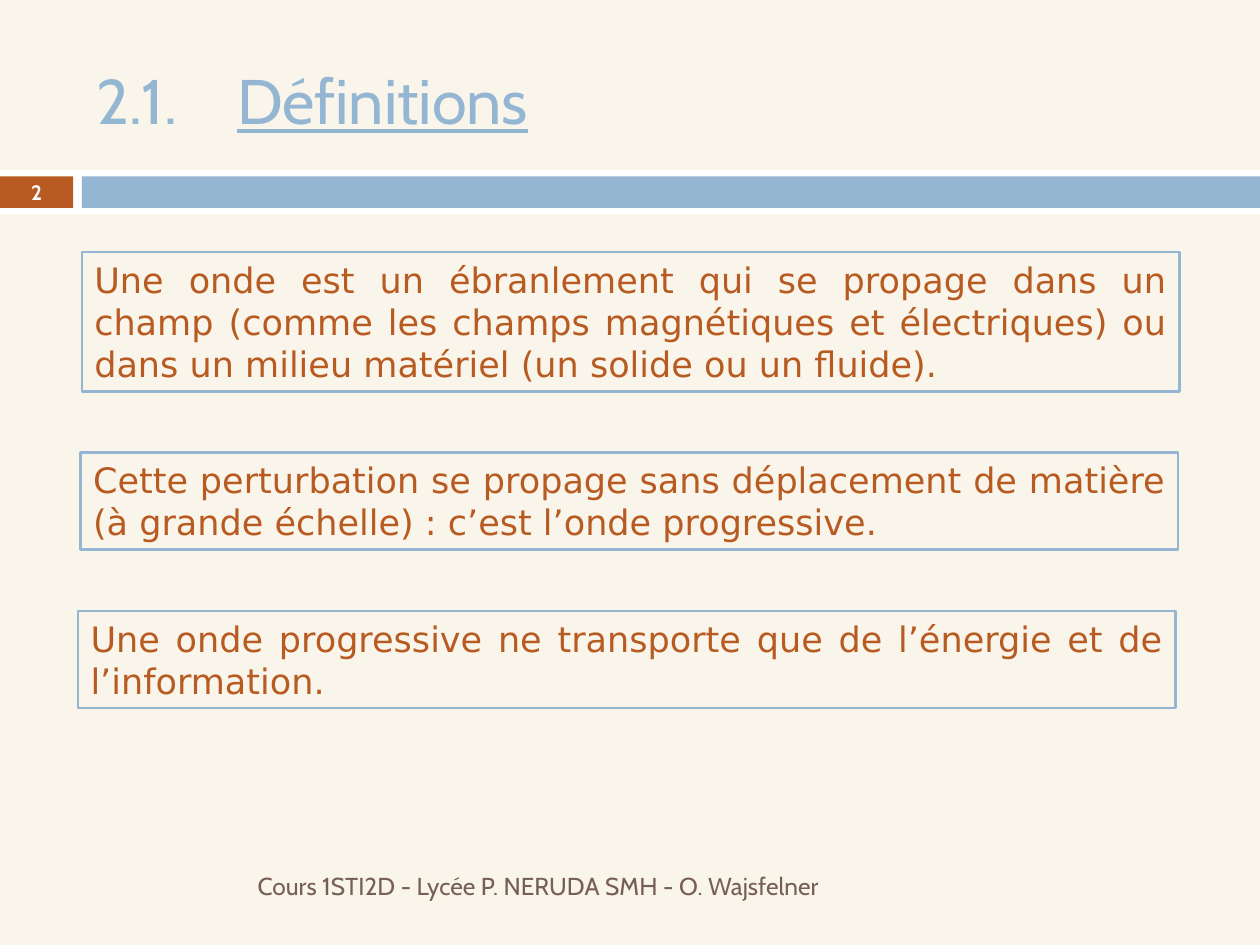
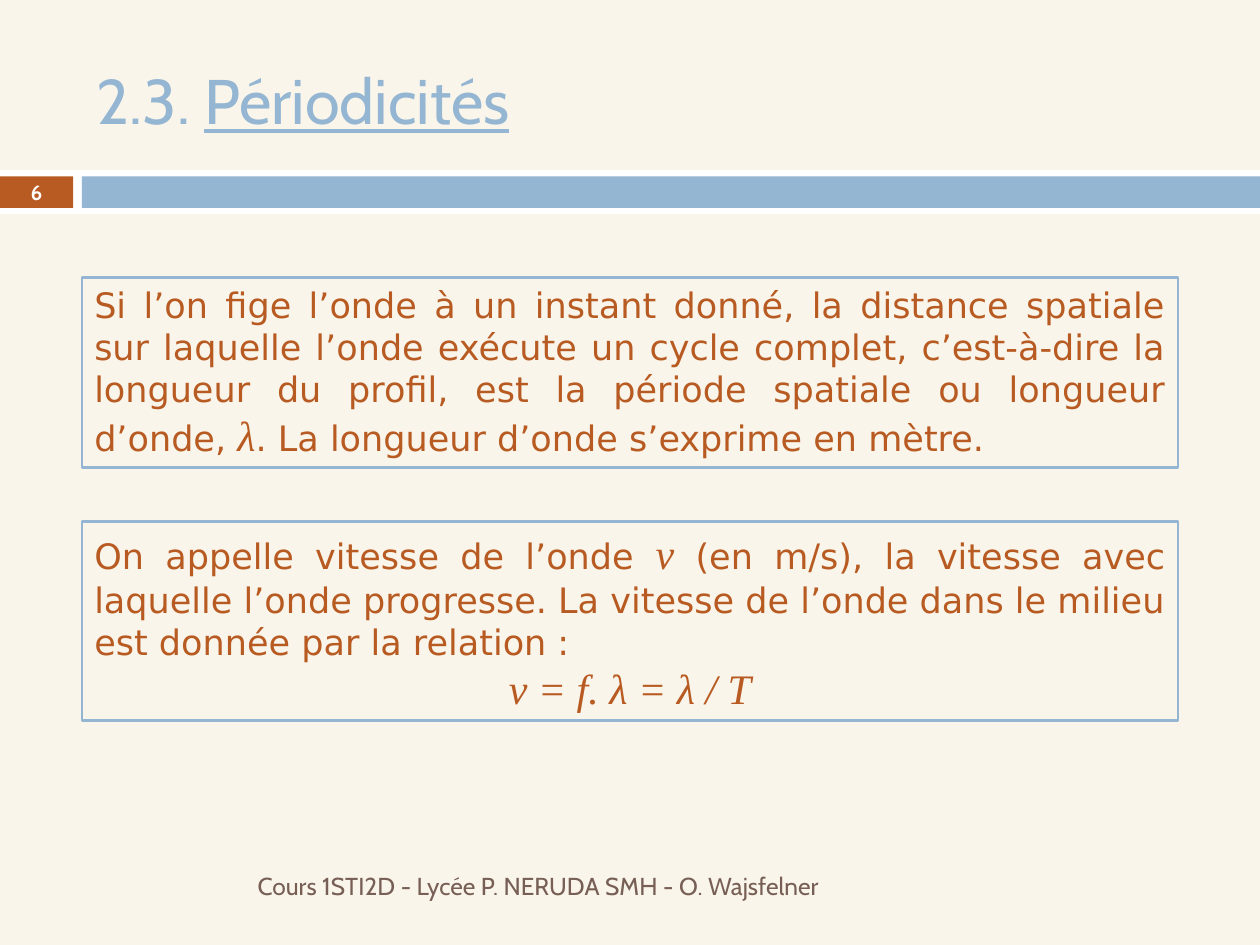
import pptx
import pptx.dml.color
import pptx.enum.shapes
import pptx.enum.text
import pptx.util

Inches = pptx.util.Inches
RGBColor = pptx.dml.color.RGBColor
ALIGN = pptx.enum.text.PP_ALIGN
ANCHOR = pptx.enum.text.MSO_ANCHOR

CREAM = RGBColor(0xFA, 0xF5, 0xEA)
WHITE = RGBColor(0xFF, 0xFF, 0xFF)
RUST = RGBColor(0xB8, 0x5B, 0x22)
BLUE = RGBColor(0x94, 0xB6, 0xD2)
BROWN = RGBColor(0x77, 0x5F, 0x55)

TITLE = {"font": "Cabin", "size": 36, "color": BLUE}
TITLE_UNDERLINED = {**TITLE, "underline": True}
NUMBER = {"font": "Cabin", "size": 11.9, "color": WHITE, "bold": True}
FOOTER = {"font": "Cabin", "size": 14, "color": BROWN}
BODY = {"font": "DejaVu Sans", "size": 20, "color": RUST}
SYMBOL = {"font": "Times New Roman", "size": 24, "color": RUST, "italic": True}

FOOTER_TEXT = "Cours 1STI2D - Lycée P. NERUDA SMH - O. Wajsfelner"

BANDS = [
    ((0, 1.35, 10, 0.35), WHITE),
    ((0, 1.4, 0.58, 0.25), RUST),
    ((0.65, 1.4, 9.35, 0.25), BLUE),
]

SLIDES = [
    {
        "number": "2",
        "heading": ("2.1.\t ", "Définitions"),
        "box_fill": None,
        "boxes": [
            ((0.65, 2, 8.71, 1.11), [
                (ALIGN.JUSTIFY, [
                    ("Une onde est un ébranlement qui se propage dans un champ "
                     "(comme les champs magnétiques et électriques) ou dans un "
                     "milieu matériel (un solide ou un fluide).", BODY),
                ]),
            ]),
            ((0.64, 3.59, 8.71, 0.77), [
                (ALIGN.JUSTIFY, [
                    ("Cette perturbation se propage sans déplacement de matière "
                     "(à grande échelle) : c’est l’onde progressive.", BODY),
                ]),
            ]),
            ((0.62, 4.85, 8.71, 0.77), [
                (ALIGN.JUSTIFY, [
                    ("Une onde progressive ne transporte que de l’énergie et de "
                     "l’information.", BODY),
                ]),
            ]),
        ],
    },
    {
        "number": "6",
        "heading": ("2.3. ", "Périodicités"),
        "box_fill": CREAM,
        "boxes": [
            ((0.65, 2.2, 8.7, 1.51), [
                (ALIGN.JUSTIFY, [
                    ("Si l’on fige l’onde à un instant donné, la distance spatiale "
                     "sur laquelle l’onde exécute un cycle complet, c’est-à-dire la "
                     "longueur du profil, est la période spatiale ou longueur "
                     "d’onde, ", BODY),
                    ("λ", SYMBOL),
                    (". La longueur d’onde s’exprime en mètre.", BODY),
                ]),
            ]),
            ((0.65, 4.14, 8.7, 1.58), [
                (ALIGN.JUSTIFY, [
                    ("On appelle vitesse de l’onde ", BODY),
                    ("v", SYMBOL),
                    (" (en m/s), la vitesse avec laquelle l’onde progresse. La "
                     "vitesse de l’onde dans le milieu est donnée par la "
                     "relation :", BODY),
                ]),
                (ALIGN.CENTER, [("v = f. λ = λ / T", SYMBOL)]),
            ]),
        ],
    },
]


def write_text(shape, paragraphs, anchor):
    frame = shape.text_frame
    frame.word_wrap = True
    frame.vertical_anchor = anchor
    for index, (alignment, runs) in enumerate(paragraphs):
        paragraph = frame.add_paragraph() if index else frame.paragraphs[0]
        paragraph.alignment = alignment
        for text, style in runs:
            run = paragraph.add_run()
            run.text = text
            run.font.name = style["font"]
            run.font.size = pptx.util.Pt(style["size"])
            run.font.color.rgb = style["color"]
            run.font.bold = style.get("bold", False)
            run.font.italic = style.get("italic", False)
            run.font.underline = style.get("underline", False)


def add_rectangle(slide, place, fill=None, line=None):
    shape = slide.shapes.add_shape(
        pptx.enum.shapes.MSO_SHAPE.RECTANGLE, *map(Inches, place))
    shape.shadow.inherit = False
    if fill is None:
        shape.fill.background()
    else:
        shape.fill.solid()
        shape.fill.fore_color.rgb = fill
    if line is None:
        shape.line.fill.background()
    else:
        shape.line.color.rgb = line
        shape.line.width = pptx.util.Pt(1.5)
    return shape


def add_label(slide, place, alignment, runs):
    label = slide.shapes.add_textbox(*map(Inches, place))
    write_text(label, [(alignment, runs)], ANCHOR.MIDDLE)


def add_definition_box(slide, place, paragraphs, fill):
    box = add_rectangle(slide, place, fill, BLUE)
    write_text(box, paragraphs, ANCHOR.TOP)
    box.text_frame.auto_size = pptx.enum.text.MSO_AUTO_SIZE.SHAPE_TO_FIT_TEXT


def build_slide(presentation, content):
    slide = presentation.slides.add_slide(presentation.slide_layouts[6])
    for place, color in BANDS:
        add_rectangle(slide, place, color)
    section, topic = content["heading"]
    add_label(slide, (0.67, 0.25, 8.92, 1.08), ALIGN.LEFT,
              [(section, TITLE), (topic, TITLE_UNDERLINED)])
    add_label(slide, (0, 1.39, 0.58, 0.27), ALIGN.CENTER,
              [(content["number"], NUMBER)])
    add_label(slide, (0.67, 6.83, 5.93, 0.4), ALIGN.RIGHT,
              [(FOOTER_TEXT, FOOTER)])
    for place, paragraphs in content["boxes"]:
        add_definition_box(slide, place, paragraphs, content["box_fill"])


def main():
    presentation = pptx.Presentation()
    presentation.slide_width = Inches(10)
    presentation.slide_height = Inches(7.5)
    background = presentation.slide_master.background.fill
    background.solid()
    background.fore_color.rgb = CREAM
    for content in SLIDES:
        build_slide(presentation, content)
    presentation.save("out.pptx")


if __name__ == "__main__":
    main()
